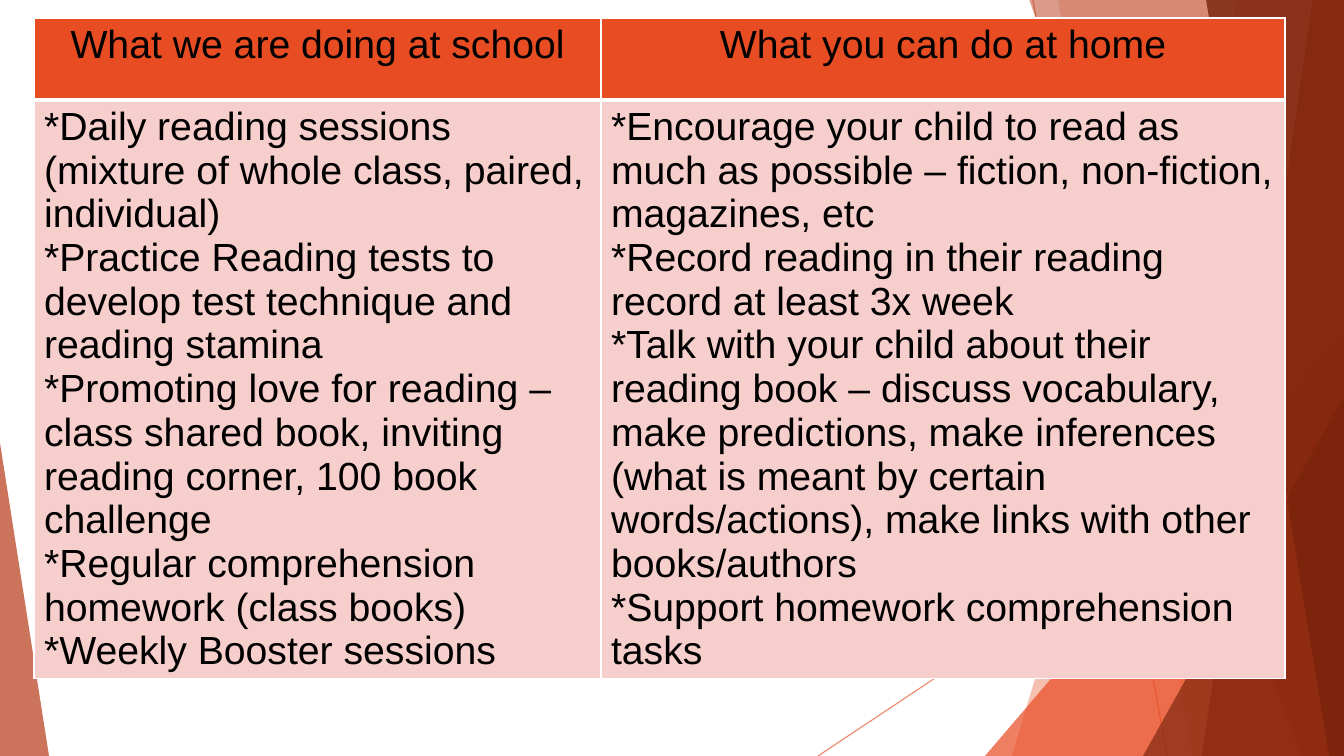
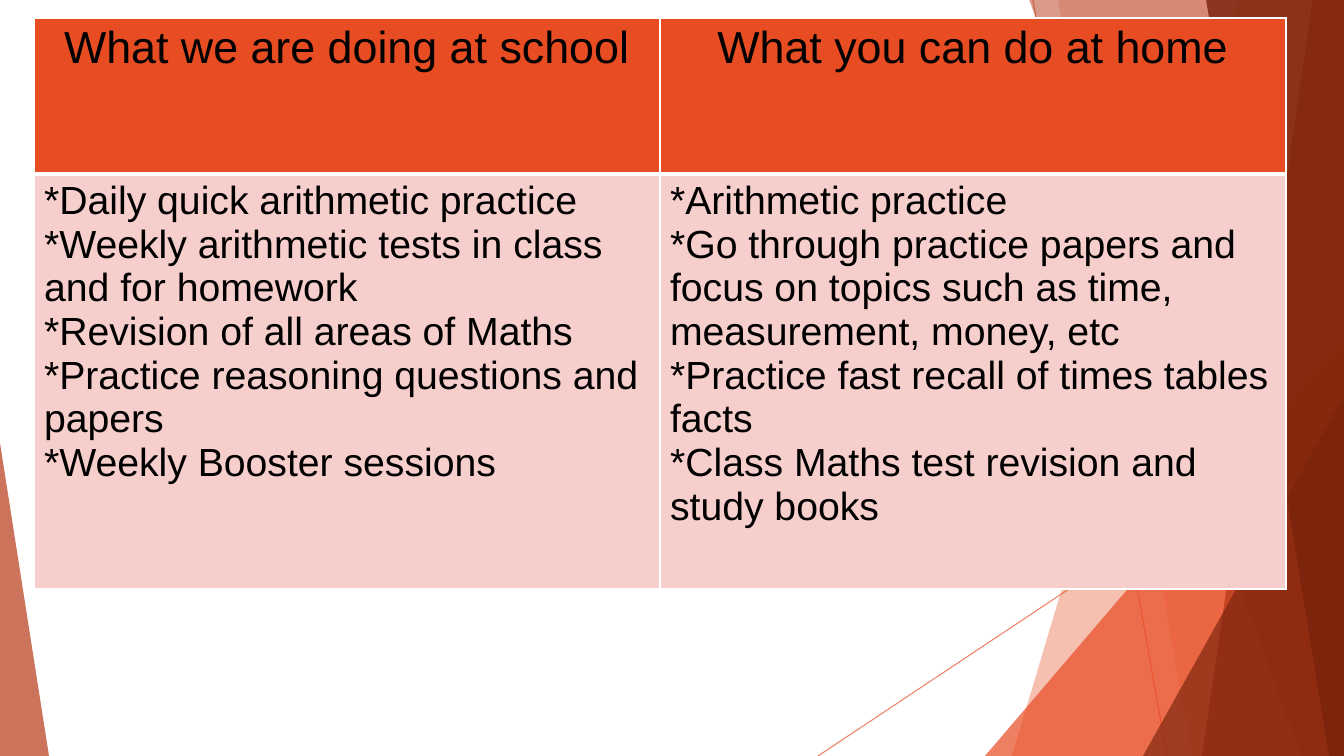
from dataclasses import dataclass

from pptx import Presentation
from pptx.dml.color import RGBColor
from pptx.enum.shapes import MSO_CONNECTOR as CONNECTOR, MSO_SHAPE as SHAPE
from pptx.enum.text import PP_ALIGN as ALIGN
from pptx.oxml.ns import qn
from pptx.oxml.xmlchemy import OxmlElement
from pptx.slide import Slide
from pptx.table import _Cell as Cell
from pptx.util import Emu, Pt

WIDTH, HEIGHT = 1344, 756
EMU_PER_PX = 12192000 / WIDTH
FONT = "Arial"
BODY_SIZE = 28
TABLE_LEFT, TABLE_TOP = 34, 18
COLORS = {
    "orange": "E84C22",
    "rust": "B43512",
    "brown": "78230C",
    "pink": "F6CECB",
    "white": "FFFFFF",
    "black": "000000",
}
HEADINGS = ("What we are doing at school", "What you can do at home")


@dataclass(frozen=True)
class Ray:
    start: tuple[int, int]
    end: tuple[int, int]


@dataclass(frozen=True)
class Band:
    """A slanted band that reaches the right edge of the slide."""
    top_x: int
    bottom_x: int
    color: str
    alpha: int


@dataclass(frozen=True)
class Wedge:
    """A right triangle standing on the bottom edge of the slide."""
    left: int
    top: int
    width: int
    peak: int
    color: str
    alpha: int


@dataclass(frozen=True)
class Plan:
    cols: tuple[int, int]
    rows: tuple[int, int]
    heading_size: int
    school: tuple[str, ...]
    home: tuple[str, ...]


BACKDROP = (
    Ray((1033, 0), (1167, HEIGHT)),
    Ray((WIDTH, 406), (818, HEIGHT)),
    Band(1238, 1012, "orange", 35),
    Band(1058, 1192, "orange", 20),
    Wedge(985, 336, 359, 1, "orange", 71),
    Band(1029, 1301, "rust", 49),
    Band(1313, 1202, "rust", 69),
    Band(1206, 1329, "brown", 80),
    Wedge(1143, 396, 201, 1, "brown", 65),
    Wedge(0, 443, 49, 0, "rust", 69),
)

PLANS = (
    Plan(
        (567, 684), (82, 578), 28,
        (
            "*Daily reading sessions (mixture of whole class, paired, individual)",
            "*Practice Reading tests to develop test technique and reading stamina",
            "*Promoting love for reading – class shared book, inviting reading "
            "corner, 100 book challenge",
            "*Regular comprehension homework (class books)",
            "*Weekly Booster sessions",
        ),
        (
            "*Encourage your child to read as much as possible – fiction, "
            "non-fiction, magazines, etc",
            "*Record reading in their reading record at least 3x week",
            "*Talk with your child about their reading book – discuss vocabulary, "
            "make predictions, make inferences (what is meant by certain "
            "words/actions), make links with other books/authors",
            "*Support homework comprehension tasks",
        ),
    ),
    Plan(
        (626, 626), (156, 415), 32,
        (
            "*Daily quick arithmetic practice",
            "*Weekly arithmetic tests in class and for homework",
            "*Revision of all areas of Maths",
            "*Practice reasoning questions and papers",
            "*Weekly Booster sessions",
        ),
        (
            "*Arithmetic practice",
            "*Go through practice papers and focus on topics such as time, "
            "measurement, money, etc",
            "*Practice fast recall of times tables facts",
            "*Class Maths test revision and study books",
        ),
    ),
)


def px(value: int) -> Emu:
    return Emu(round(value * EMU_PER_PX))


def rgb(name: str) -> RGBColor:
    return RGBColor.from_string(COLORS[name])


def paint(fill, color: str, alpha: int) -> None:
    """Fill with a colour at an opacity given in percent."""
    fill.solid()
    fill.fore_color.rgb = rgb(color)
    node = OxmlElement("a:alpha")
    node.set("val", str(alpha * 1000))
    fill._xPr.find(f"{qn('a:solidFill')}/{qn('a:srgbClr')}").append(node)


def add_ray(s: Slide, ray: Ray) -> None:
    line = s.shapes.add_connector(
        CONNECTOR.STRAIGHT, *map(px, ray.start + ray.end))
    line.line.width = Pt(0.75)
    paint(line.line.fill, "orange", 69)
    line._element.spPr.append(OxmlElement("a:effectLst"))


def add_facet(s: Slide, facet: Band | Wedge) -> None:
    if isinstance(facet, Band):
        outline = s.shapes.build_freeform(facet.top_x, -1, scale=EMU_PER_PX)
        outline.add_line_segments(
            [(WIDTH, -1), (WIDTH, HEIGHT), (facet.bottom_x, HEIGHT)])
        sp = outline.convert_to_shape()
    else:
        sp = s.shapes.add_shape(
            SHAPE.ISOSCELES_TRIANGLE, px(facet.left), px(facet.top),
            px(facet.width), px(HEIGHT - facet.top))
        sp.adjustments[0] = facet.peak
    sp.shadow.inherit = False
    sp.line.fill.background()
    paint(sp.fill, facet.color, facet.alpha)


def add_backdrop(s: Slide) -> None:
    for item in BACKDROP:
        if isinstance(item, Ray):
            add_ray(s, item)
        else:
            add_facet(s, item)


def set_borders(cell: Cell, top: int, bottom: int) -> None:
    """Draw white borders; top and bottom widths are in points."""
    tc_pr = cell._tc.get_or_add_tcPr()
    for side, width in (("L", 1), ("R", 1), ("T", top), ("B", bottom)):
        ln = OxmlElement(f"a:ln{side}")
        ln.set("w", str(Pt(width)))
        fill = OxmlElement("a:solidFill")
        color = OxmlElement("a:srgbClr")
        color.set("val", COLORS["white"])
        fill.append(color)
        ln.append(fill)
        tc_pr.append(ln)


def fill_cell(cell: Cell, lines: tuple[str, ...], size: int, heading: bool) -> None:
    set_borders(cell, *((1, 3) if heading else (3, 1)))
    cell.fill.solid()
    cell.fill.fore_color.rgb = rgb("orange" if heading else "pink")
    tf = cell.text_frame
    tf.text = "\n".join(lines)
    for p in tf.paragraphs:
        p.alignment = ALIGN.CENTER if heading else ALIGN.LEFT
        for r in p.runs:
            r.font.name = FONT
            r.font.size = Pt(size)
            r.font.bold = False
            r.font.color.rgb = rgb("black")


def add_plan(s: Slide, plan: Plan) -> None:
    table = s.shapes.add_table(
        2, 2, px(TABLE_LEFT), px(TABLE_TOP),
        px(sum(plan.cols)), px(sum(plan.rows))).table
    for column, width in zip(table.columns, plan.cols):
        column.width = px(width)
    for row, height in zip(table.rows, plan.rows):
        row.height = px(height)
    for i, (heading, lines) in enumerate(zip(HEADINGS, (plan.school, plan.home))):
        fill_cell(table.cell(0, i), (heading,), plan.heading_size, True)
        fill_cell(table.cell(1, i), lines, BODY_SIZE, False)


def main() -> None:
    prs = Presentation()
    prs.slide_width, prs.slide_height = px(WIDTH), px(HEIGHT)
    for plan in PLANS:
        s = prs.slides.add_slide(prs.slide_layouts[6])
        add_backdrop(s)
        add_plan(s, plan)
    prs.save("out.pptx")


if __name__ == "__main__":
    main()
